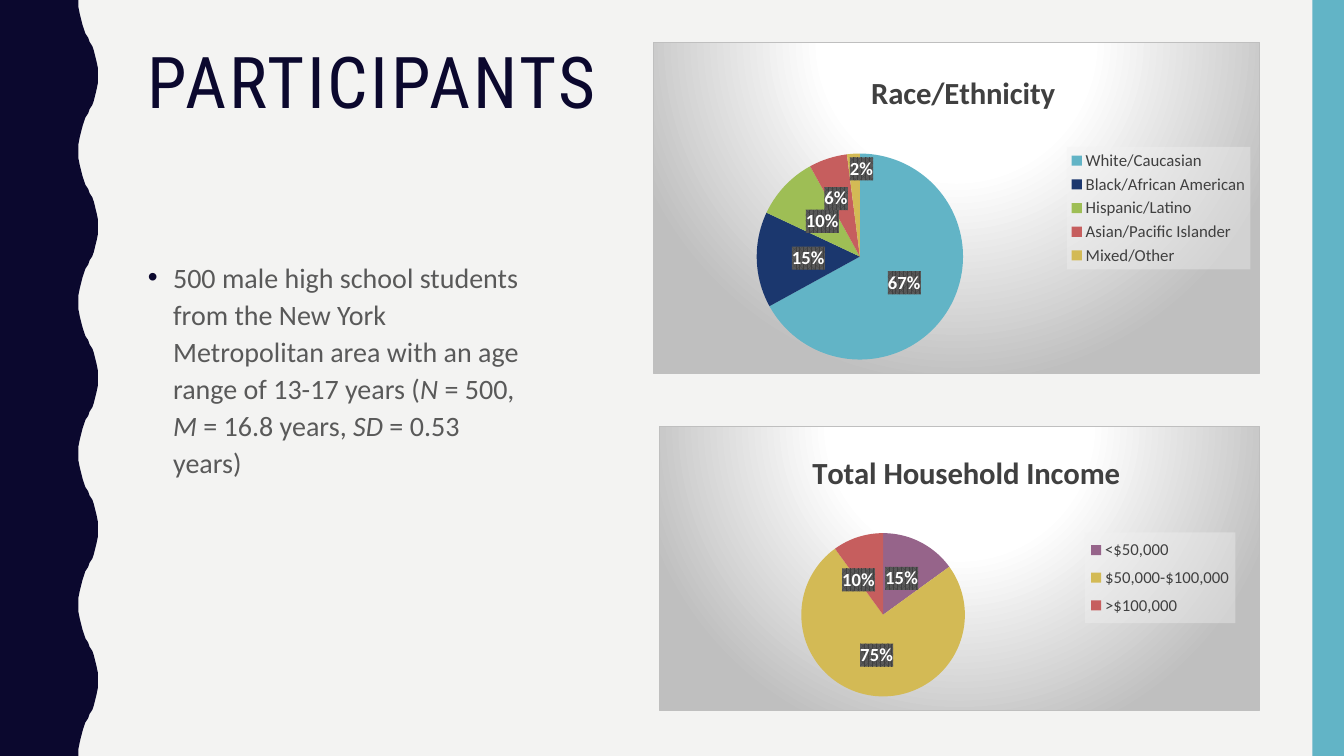
from lxml import etree
from pptx import Presentation
from pptx import util as u
from pptx.chart import data as chart_data
from pptx.dml.color import RGBColor
from pptx.enum import chart as chart_enum, shapes, text
from pptx.oxml import ns, parse_xml

Pt = u.Pt
NAVY = RGBColor(0x0B, 0x08, 0x2E)
TEAL = RGBColor(0x62, 0xB4, 0xC6)
BLUE = RGBColor(0x1B, 0x37, 0x6E)
GREEN = RGBColor(0x9E, 0xBE, 0x55)
RED = RGBColor(0xC6, 0x5E, 0x5E)
GOLD = RGBColor(0xD3, 0xBA, 0x55)
PURPLE = RGBColor(0x96, 0x64, 0x8A)
PAPER = RGBColor(0xF3, 0xF3, 0xF2)
DARK_GRAY = RGBColor(0x40, 0x40, 0x40)
BODY_GRAY = RGBColor(0x59, 0x59, 0x59)
WHITE = RGBColor(0xFF, 0xFF, 0xFF)
BLACK = RGBColor(0, 0, 0)

SLIDE_WIDTH, SLIDE_HEIGHT = 960, 540
WAVE_COUNT = 5
WAVE_LENGTH = SLIDE_HEIGHT / WAVE_COUNT
HALF_WAVE = [
    (56, 0), (56.3, 5), (57, 10), (57.8, 14.4), (58.6, 18), (59.8, 21), (61.2, 24),
    (62.6, 27), (64, 30), (65.5, 33), (66.9, 36), (68.2, 39.6), (69.2, 43.9),
    (69.7, 49), (69.9, 54),
]
TITLE = "PARTICIPANTS"
BODY_RUNS = [
    ("500 male high school students from the New York Metropolitan area "
     "with an age range of 13-17 years (", False),
    ("N", True), (" = 500, ", False), ("M", True), (" = 16.8 years, ", False),
    ("SD", True), (" = 0.53 years)", False),
]
PIES = [
    {
        "title": "Race/Ethnicity", "series": "Series 1",
        "box": (466.5, 30.2, 433.5, 237),
        "slices": [("White/Caucasian", 67, TEAL), ("Black/African American", 15, BLUE),
                   ("Hispanic/Latino", 10, GREEN), ("Asian/Pacific Islander", 6, RED),
                   ("Mixed/Other", 2, GOLD)],
        "title_at": (0.35, 0.07),
        "plot_at": (0.17, 0.335, 0.341, 0.623),
        "legend_at": (0.682, 0.315, 0.303, 0.37),
        "moved_labels": {3: (-0.013, -0.027), 4: (0.008, -0.11)},
    },
    {
        "title": "Total Household Income", "series": "Total Household Income",
        "box": (470.9, 304.2, 429.1, 203.6),
        "slices": [("<$50,000", 15, PURPLE), ("$50,000-$100,000", 75, GOLD),
                   (">$100,000", 10, RED)],
        "title_at": (0.245, 0.07),
        "plot_at": (0.236, 0.376, 0.273, 0.575),
        "legend_at": (0.709, 0.373, 0.251, 0.32),
        "moved_labels": {2: (-0.02, 0.014)},
    },
]
CHART_FRAME = """<c:spPr %s><a:gradFill><a:gsLst>
<a:gs pos="0"><a:srgbClr val="FFFFFF"/></a:gs><a:gs pos="39000"><a:srgbClr val="FFFFFF"/></a:gs>
<a:gs pos="100000"><a:srgbClr val="BFBFBF"/></a:gs></a:gsLst>
<a:path path="circle"><a:fillToRect l="50000" t="-80000" r="50000" b="180000"/></a:path></a:gradFill>
<a:ln w="9525"><a:solidFill><a:srgbClr val="BFBFBF"/></a:solidFill></a:ln></c:spPr>"""
LEGEND_FRAME = """<c:spPr %s><a:solidFill><a:srgbClr val="F2F2F2"><a:alpha val="39000"/></a:srgbClr>
</a:solidFill><a:ln><a:noFill/></a:ln></c:spPr>"""
LABEL_FRAME = """<c:spPr %s><a:pattFill prst="pct75"><a:fgClr><a:srgbClr val="404040"/></a:fgClr>
<a:bgClr><a:srgbClr val="595959"/></a:bgClr></a:pattFill><a:ln><a:noFill/></a:ln></c:spPr>"""


def chart_xml(template):
    return parse_xml(template % ns.nsdecls("c", "a"))


def child(element, tag):
    return element.find(ns.qn(tag))


def add_value(parent, tag, value):
    etree.SubElement(parent, ns.qn(tag)).set("val", str(value))


def make_layout(place, absolute=True, inner=False):
    layout = parse_xml("<c:layout %s><c:manualLayout/></c:layout>" % ns.nsdecls("c"))
    manual = layout[0]
    if inner:
        add_value(manual, "c:layoutTarget", "inner")
    if absolute:
        add_value(manual, "c:xMode", "edge")
        add_value(manual, "c:yMode", "edge")
    for name, value in zip("xywh", place):
        add_value(manual, "c:" + name, value)
    return layout


def place_part(part, place, before=None):
    old = child(part, "c:layout")
    if old is not None:
        part.remove(old)
    anchor = part[0] if before is None else child(part, before)
    anchor.addprevious(make_layout(place, inner=before is None))


def style_font(font, size, color, bold=False, name="Calibri"):
    font.name, font.size, font.bold = name, Pt(size), bold
    font.color.rgb = color


def fill_plain(shape, color):
    shape.shadow.inherit = False
    shape.fill.solid()
    shape.fill.fore_color.rgb = color
    shape.line.fill.background()


def add_text_box(slide, left, top, width, height):
    frame = slide.shapes.add_textbox(Pt(left), Pt(top), Pt(width), Pt(height)).text_frame
    frame.word_wrap = True
    frame.vertical_anchor = text.MSO_ANCHOR.TOP
    return frame.paragraphs[0]


def add_wave(slide):
    wave = HALF_WAVE + [(x, WAVE_LENGTH - y) for x, y in HALF_WAVE[-2::-1]]
    edge = [(x, y + turn * WAVE_LENGTH) for turn in range(WAVE_COUNT) for x, y in wave]
    builder = slide.shapes.build_freeform(0, 0, scale=Pt(1))
    builder.add_line_segments(edge + [(0, SLIDE_HEIGHT)], close=True)
    fill_plain(builder.convert_to_shape(), NAVY)


def add_labels(series, moved_labels):
    labels = series.data_labels
    labels.show_percentage, labels.show_value = True, False
    labels.number_format, labels.number_format_is_linked = "0%", False
    labels.position = chart_enum.XL_LABEL_POSITION.CENTER
    style_font(labels.font, 13.3, WHITE, True)
    element = labels._element
    child(element, "c:txPr").addprevious(chart_xml(LABEL_FRAME))
    for order, (index, offset) in enumerate(moved_labels.items()):
        label = parse_xml("<c:dLbl %s/>" % ns.nsdecls("c"))
        add_value(label, "c:idx", index)
        label.append(make_layout(offset, absolute=False))
        add_value(label, "c:dLblPos", "ctr")
        for part in ("LegendKey", "Val", "CatName", "SerName", "Percent", "BubbleSize"):
            add_value(label, "c:show" + part, int(part == "Percent"))
        element.insert(order, label)


def add_pie(slide, pie):
    names, values, colors = zip(*pie["slices"])
    data = chart_data.CategoryChartData()
    data.categories = names
    data.add_series(pie["series"], values)
    box = [Pt(length) for length in pie["box"]]
    chart = slide.shapes.add_chart(chart_enum.XL_CHART_TYPE.PIE, *box, data).chart
    style_font(chart.font, 10, BLACK)
    chart_element = child(chart._chartSpace, "c:chart")
    chart_element.addnext(chart_xml(CHART_FRAME))

    chart.has_title = True
    run = chart.chart_title.text_frame.paragraphs[0].add_run()
    run.text = pie["title"]
    style_font(run.font, 22, DARK_GRAY, True)
    place_part(chart.chart_title._element, pie["title_at"], "c:overlay")

    chart.has_legend = True
    legend = chart.legend
    legend.position = chart_enum.XL_LEGEND_POSITION.RIGHT
    legend.include_in_layout = False
    style_font(legend.font, 12, DARK_GRAY)
    child(legend._element, "c:txPr").addprevious(chart_xml(LEGEND_FRAME))
    place_part(legend._element, pie["legend_at"], "c:overlay")

    place_part(child(chart_element, "c:plotArea"), pie["plot_at"])
    plot = chart.plots[0]
    plot.vary_by_categories = True
    series = plot.series[0]
    for index, color in enumerate(colors):
        fill = series.points[index].format.fill
        fill.solid()
        fill.fore_color.rgb = color
    add_labels(series, pie["moved_labels"])


def main():
    presentation = Presentation()
    presentation.slide_width, presentation.slide_height = Pt(SLIDE_WIDTH), Pt(SLIDE_HEIGHT)
    slide = presentation.slides.add_slide(presentation.slide_layouts[6])
    slide.background.fill.solid()
    slide.background.fill.fore_color.rgb = PAPER

    add_wave(slide)
    stripe = slide.shapes.add_shape(
        shapes.MSO_SHAPE.RECTANGLE, Pt(937.5), 0, Pt(22.5), Pt(SLIDE_HEIGHT))
    fill_plain(stripe, TEAL)

    heading = add_text_box(slide, 98.6, 30.2, 801.4, 117.4)
    heading.line_spacing = 0.9
    run = heading.add_run()
    run.text = TITLE
    style_font(run.font, 51, NAVY, name="Roboto Condensed")
    run.font._element.set("spc", "200")

    body = add_text_box(slide, 98.6, 180, 281.5, 283)
    body.line_spacing, body.space_before = 1.1, Pt(7)
    properties = body._p.get_or_add_pPr()
    properties.set("marL", str(Pt(18)))
    properties.set("indent", str(Pt(-18)))
    bullet_color = etree.SubElement(properties, ns.qn("a:buClr"))
    add_value(bullet_color, "a:srgbClr", NAVY)
    etree.SubElement(properties, ns.qn("a:buFont")).set("typeface", "Arial")
    etree.SubElement(properties, ns.qn("a:buChar")).set("char", "•")
    for words, italic in BODY_RUNS:
        run = body.add_run()
        run.text = words
        style_font(run.font, 20, BODY_GRAY)
        run.font.italic = italic

    for pie in PIES:
        add_pie(slide, pie)
    presentation.save("out.pptx")


if __name__ == "__main__":
    main()
